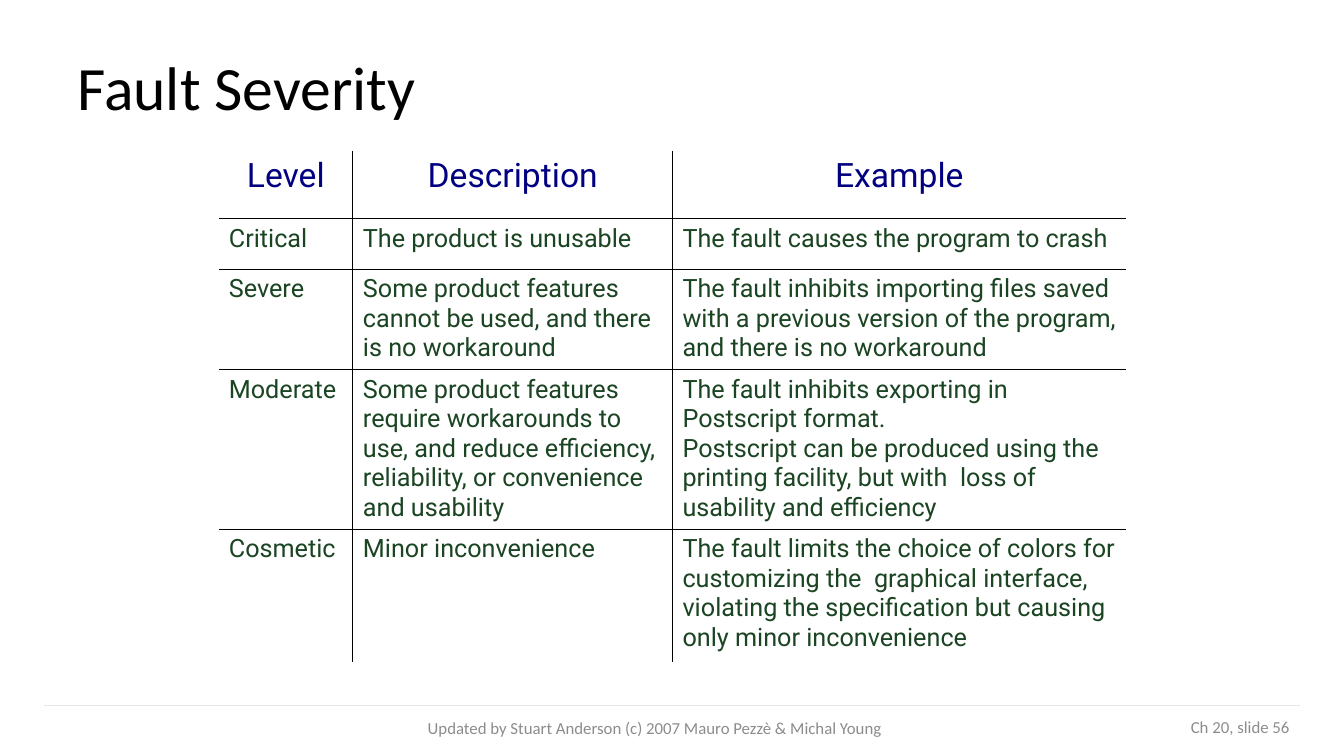
"""Build the Fault Severity slide: a ruled table with a title and a footer."""
import pptx
import pptx.dml.color
import pptx.enum.shapes
import pptx.enum.text
import pptx.oxml
import pptx.oxml.ns
import pptx.util

Inches = pptx.util.Inches
Pt = pptx.util.Pt
ALIGN = pptx.enum.text.PP_ALIGN
MIDDLE = pptx.enum.text.MSO_ANCHOR.MIDDLE

LEVELS = [
    ("Level", "Description", "Example"),
    ("Critical", "The product is unusable", "The fault causes the program to crash"),
    ("Severe",
     "Some product features cannot be used, and there is no workaround",
     "The fault inhibits importing files saved with a previous version of the program, "
     "and there is no workaround"),
    ("Moderate",
     "Some product features require workarounds to use, and reduce efficiency, "
     "reliability, or convenience and usability",
     "The fault inhibits exporting in Postscript format.\v"
     "Postscript can be produced using the printing facility, but with  loss of "
     "usability and efficiency"),
    ("Cosmetic", "Minor inconvenience",
     "The fault limits the choice of colors for customizing the  graphical interface, "
     "violating the specification but causing only minor inconvenience"),
]
COLUMN_WIDTHS = [1.33, 3.17, 4.5]
ROW_HEIGHTS = [0.67, 0.5, 1, 1.58, 1.32]
TEXTS = [
    ("Fault Severity", (0.67, 0.3, 12, 1.2), 44, "000000", ALIGN.LEFT, 0.9),
    ("Updated by Stuart Anderson (c) 2007 Mauro Pezzè & Michal Young",
     (3.99, 7.09, 5.01, 0.26), 12, "8C8C8C", ALIGN.CENTER, 1),
    ("Ch 20, slide 56", (9.78, 7.08, 3.11, 0.27), 12, "8C8C8C", ALIGN.RIGHT, 1),
]


def color(value):
    return pptx.dml.color.RGBColor.from_string(value)


def style(paragraph, font_name, size, value, align):
    paragraph.font.name = font_name
    paragraph.font.size = Pt(size)
    paragraph.font.color.rgb = color(value)
    paragraph.alignment = align


def rule_cell(cell, ruled_sides):
    properties = cell._tc.get_or_add_tcPr()
    namespace = pptx.oxml.ns.nsdecls("a")
    for position, side in enumerate("LRTB"):
        if side in ruled_sides:
            fill = '<a:solidFill><a:srgbClr val="000000"/></a:solidFill>'
        else:
            fill = "<a:noFill/>"
        border = f'<a:ln{side} {namespace} w="{Pt(1)}">{fill}</a:ln{side}>'
        properties.insert(position, pptx.oxml.parse_xml(border))


def add_levels(slide):
    rows, columns = len(ROW_HEIGHTS), len(COLUMN_WIDTHS)
    levels = slide.shapes.add_table(
        rows, columns, Inches(2.17), Inches(1.5),
        Inches(sum(COLUMN_WIDTHS)), Inches(sum(ROW_HEIGHTS))).table
    levels.first_row = levels.horz_banding = False
    for column, width in zip(levels.columns, COLUMN_WIDTHS):
        column.width = Inches(width)
    for r, (row, height) in enumerate(zip(levels.rows, ROW_HEIGHTS)):
        row.height = Inches(height)
        for c, cell in enumerate(row.cells):
            cell.text_frame.text = LEVELS[r][c]
            cell.fill.background()
            inner = {"L": c > 0, "R": c < columns - 1, "T": r > 0, "B": r < rows - 1}
            rule_cell(cell, [side for side in inner if inner[side]])
            look = (18, "1A4422", ALIGN.LEFT) if r else (24, "000080", ALIGN.CENTER)
            style(cell.text_frame.paragraphs[0], "Roboto", *look)


def add_text(slide, text, box, size, value, align, spacing):
    frame = slide.shapes.add_textbox(*map(Inches, box)).text_frame
    frame.word_wrap = True
    frame.vertical_anchor = MIDDLE
    frame.text = text
    frame.paragraphs[0].line_spacing = spacing
    style(frame.paragraphs[0], "Calibri", size, value, align)


def add_footer_rule(slide):
    footer_rule = slide.shapes.add_connector(
        pptx.enum.shapes.MSO_CONNECTOR.STRAIGHT,
        Inches(0.44), Inches(7), Inches(12.89), Inches(7))
    footer_rule.line.color.rgb = color("E7E6E6")
    footer_rule.line.width = Pt(0.75)
    no_effects = f'<a:effectLst {pptx.oxml.ns.nsdecls("a")}/>'
    footer_rule._element.spPr.append(pptx.oxml.parse_xml(no_effects))


def main():
    deck = pptx.Presentation()
    deck.slide_width, deck.slide_height = Inches(13.33), Inches(7.5)
    slide = deck.slides.add_slide(deck.slide_layouts[6])
    add_footer_rule(slide)
    add_levels(slide)
    for entry in TEXTS:
        add_text(slide, *entry)
    deck.save("out.pptx")


if __name__ == "__main__":
    main()
